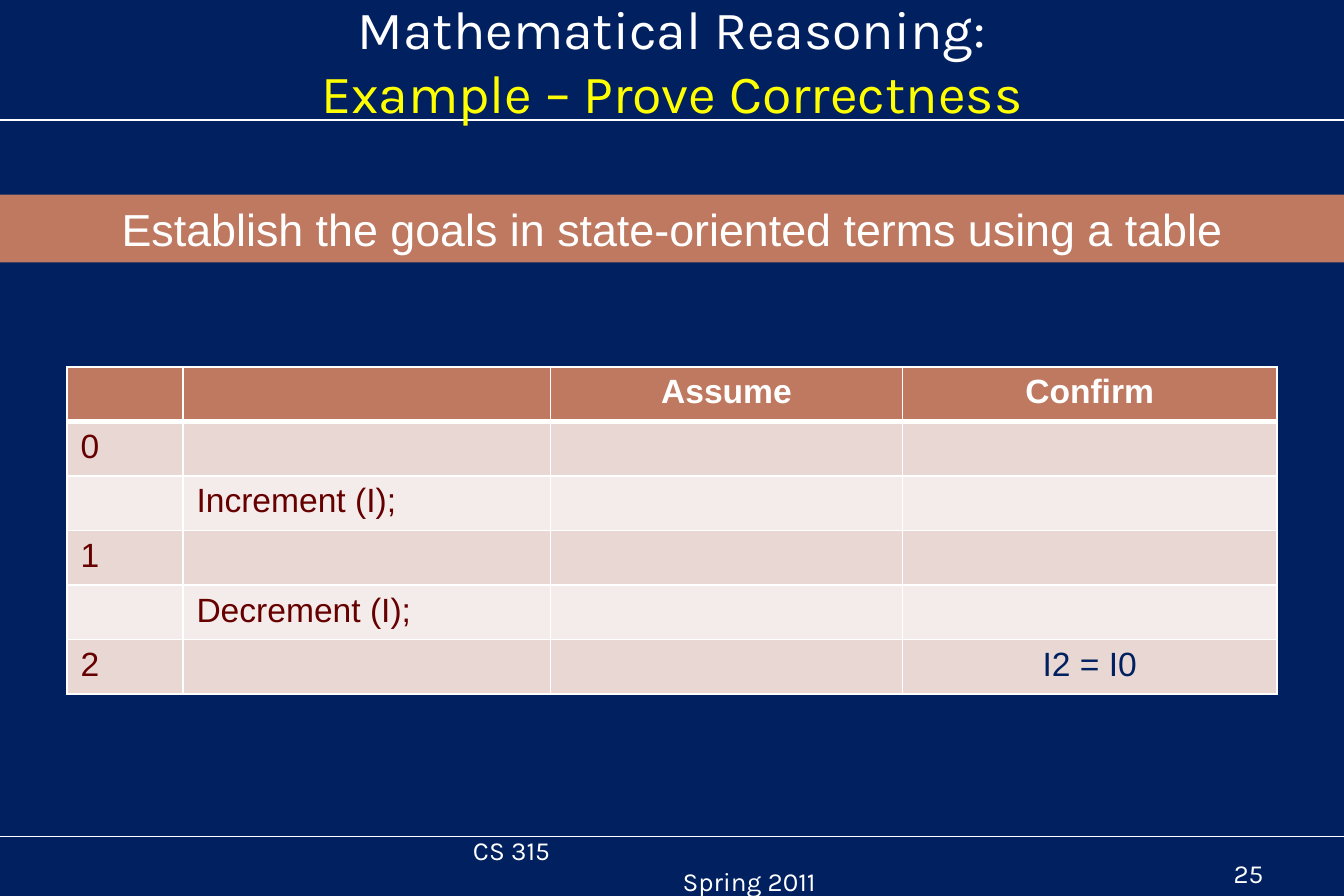
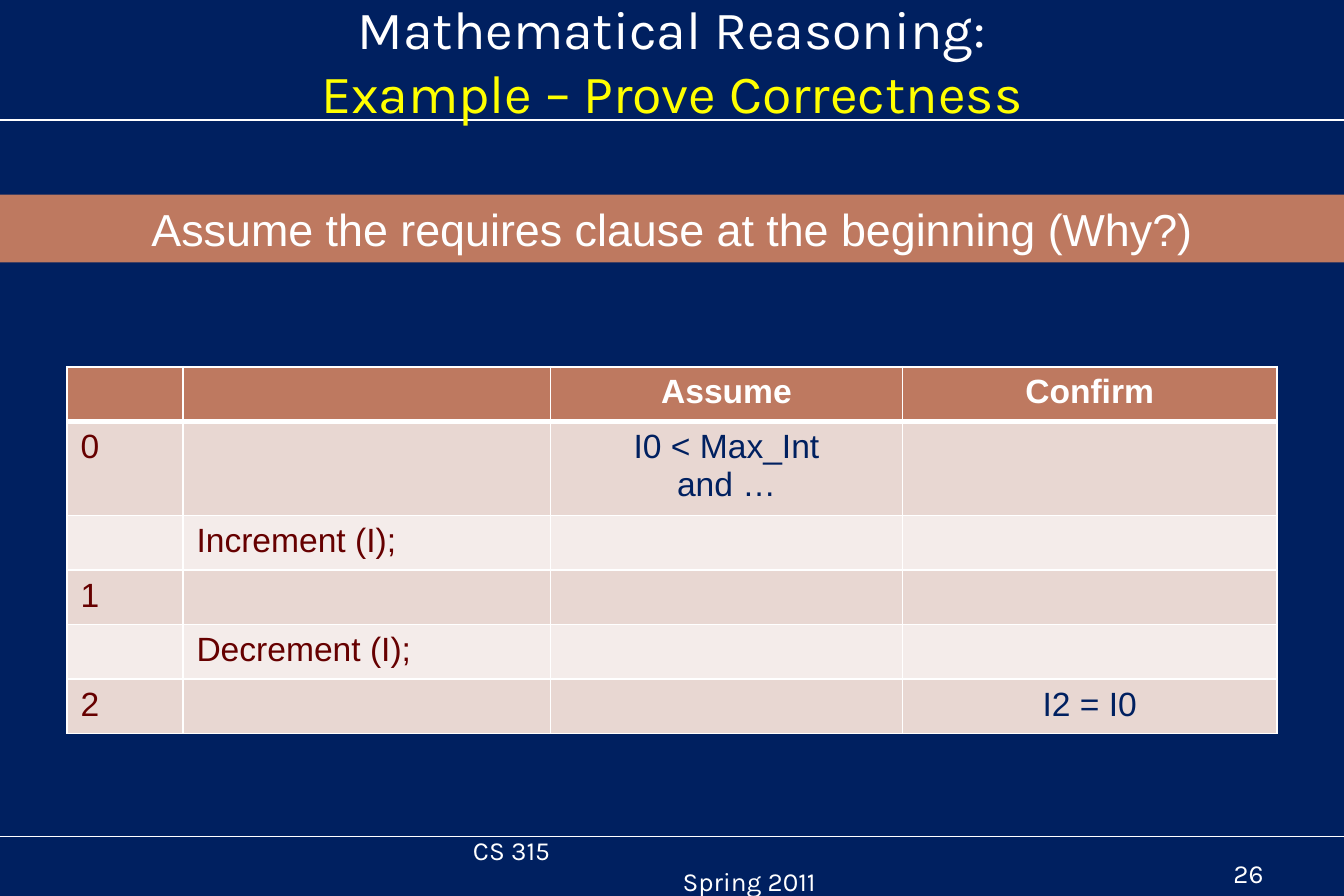
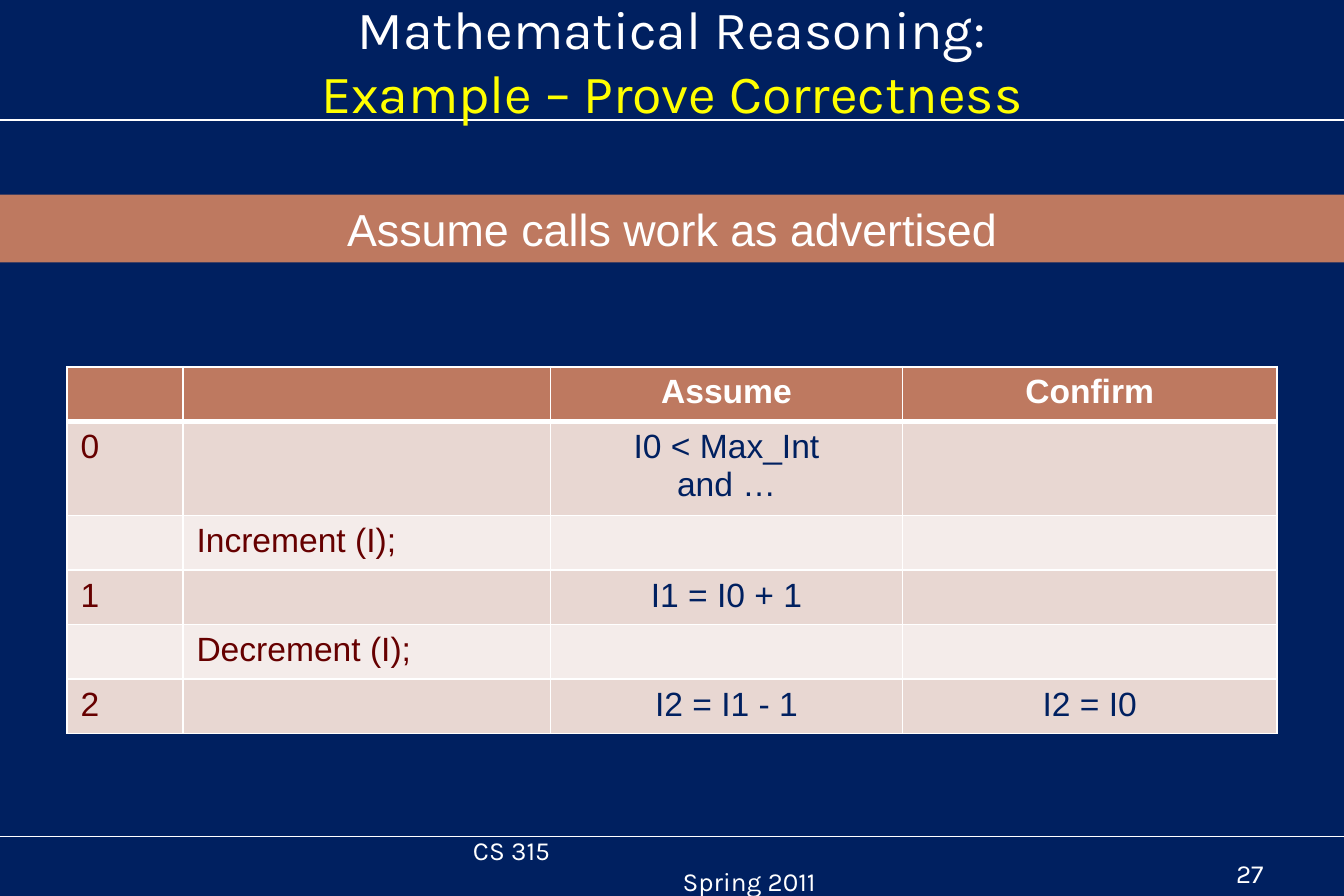
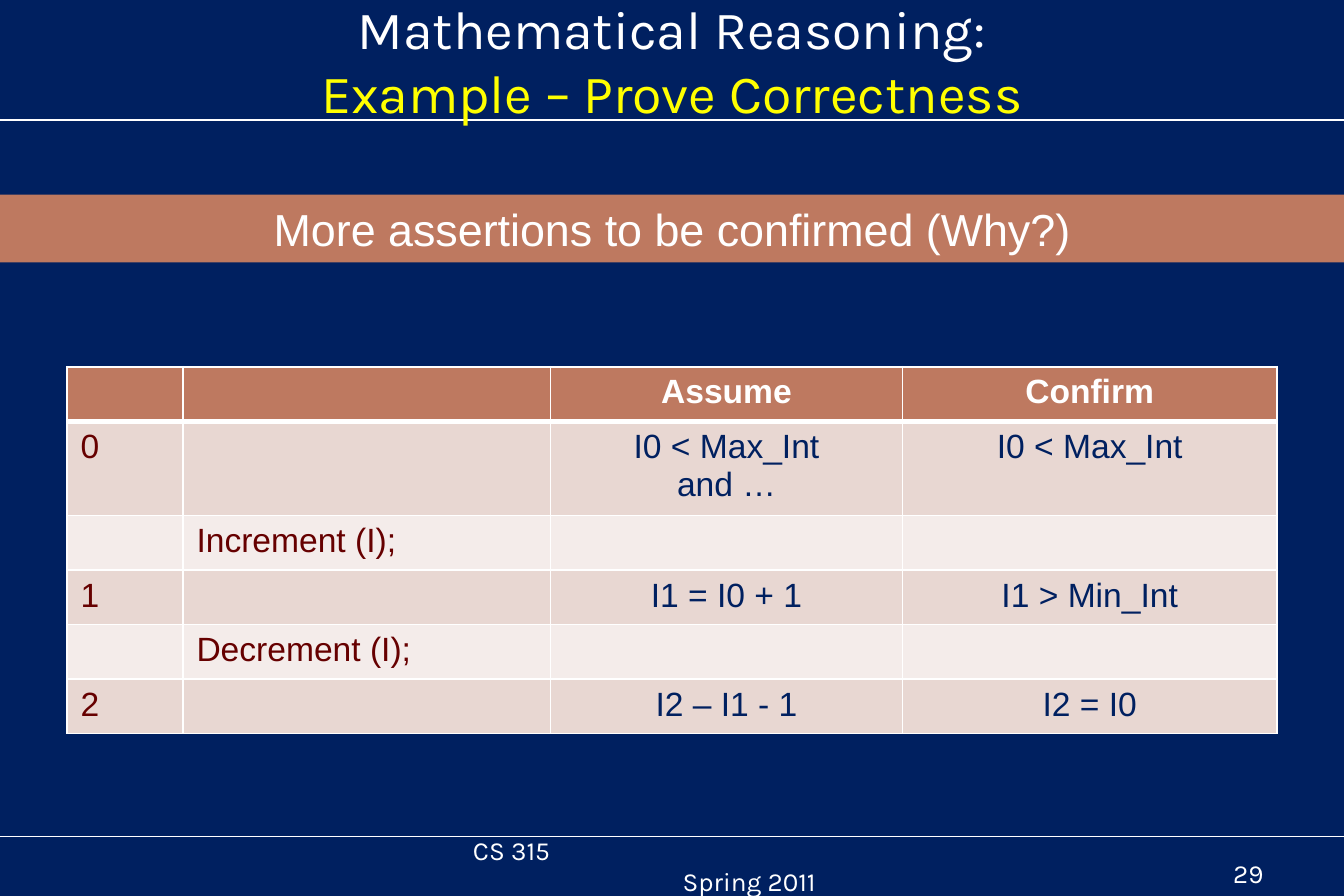
"""Build four slides that prove Increment then Decrement correct with a table."""
from lxml import etree
from pptx import Presentation
from pptx.dml.color import RGBColor
from pptx.enum.shapes import MSO_CONNECTOR, MSO_SHAPE
from pptx.enum.text import MSO_ANCHOR, MSO_AUTO_SIZE, PP_ALIGN
from pptx.oxml.ns import qn
from pptx.util import Cm, Pt

STRAIGHT, RECT = MSO_CONNECTOR.STRAIGHT, MSO_SHAPE.RECTANGLE
TOP, MIDDLE, BOTTOM = MSO_ANCHOR.TOP, MSO_ANCHOR.MIDDLE, MSO_ANCHOR.BOTTOM
LEFT, CENTER, RIGHT = PP_ALIGN.LEFT, PP_ALIGN.CENTER, PP_ALIGN.RIGHT
GROW = MSO_AUTO_SIZE.SHAPE_TO_FIT_TEXT

NAVY, WHITE, YELLOW = "002060", "FFFFFF", "FFFF00"
CLAY, MAROON, ROW_DARK, ROW_LIGHT = "BE7960", "660000", "E8D7D2", "F4ECEA"
HEAD_FONT, BODY_FONT = "Karla", "Arial"
WIDTH, HEIGHT = 25.4, 16.93
RULES = (15.8, 2.27)

TITLE = [("Mathematical Reasoning:", WHITE), ("Example – Prove Correctness", YELLOW)]
FOOTER = ["CS 315", "Spring 2011"]
HEADER = ("", "", "Assume", "Confirm")
STEPS = [("0", ""), ("", "Increment (I);"), ("1", ""), ("", "Decrement (I);"), ("2", "")]
COLUMNS = (2.19, 6.94, 6.66, 7.07)
ROW_HEIGHT = 1.03

START = "I0 < Max_Int\nand …"
GOAL = "I2 = I0"
SLIDES = [
    {"number": 25, "band": "Establish the goals in state-oriented terms using a table",
     "assume": {}, "confirm": {"2": GOAL}},
    {"number": 26, "band": "Assume the requires clause at the beginning (Why?)",
     "assume": {"0": START}, "confirm": {"2": GOAL}},
    {"number": 27, "band": "Assume calls work as advertised",
     "assume": {"0": START, "1": "I1 = I0 + 1", "2": "I2 = I1 - 1"},
     "confirm": {"2": GOAL}},
    {"number": 29, "band": "More assertions to be confirmed (Why?)",
     "assume": {"0": START, "1": "I1 = I0 + 1", "2": "I2 – I1 - 1"},
     "confirm": {"0": "I0 < Max_Int", "1": "I1 > Min_Int", "2": GOAL}},
]


def rgb(color):
    return RGBColor.from_string(color)


def write(tf, paragraphs, size=18, font=BODY_FONT, color=WHITE, bold=False,
          align=LEFT, anchor=TOP):
    tf.word_wrap = True
    tf.vertical_anchor = anchor
    for i, lines in enumerate(paragraphs):
        p = tf.paragraphs[0] if i == 0 else tf.add_paragraph()
        p.alignment = align
        if isinstance(lines, str):
            lines = [(lines, color)]
        for j, (text, line_color) in enumerate(lines):
            if j:
                p.add_line_break()
            r = p.add_run()
            r.text = text
            r.font.size, r.font.name, r.font.bold = Pt(size), font, bold
            r.font.color.rgb = rgb(line_color)


def add_text(s, box, paragraphs, **style):
    tf = s.shapes.add_textbox(*map(Cm, box)).text_frame
    write(tf, paragraphs, **style)
    return tf


def add_rule(s, y):
    line = s.shapes.add_connector(STRAIGHT, 0, Cm(y), Cm(WIDTH), Cm(y))
    line.line.color.rgb = rgb(WHITE)
    line.line.width = Pt(0.75)
    etree.SubElement(line._element.spPr, qn("a:effectLst"))


def add_frame(s, number):
    for y in RULES:
        add_rule(s, y)
    add_text(s, (1.27, 0.38, 22.86, 1.5), [TITLE], size=28.8, font=HEAD_FONT,
             align=CENTER, anchor=MIDDLE)
    small = {"size": 14, "font": HEAD_FONT, "anchor": BOTTOM}
    tf = add_text(s, (8.69, 15.75, 8.05, 1.32), FOOTER, **small)
    tf.paragraphs[1]._p.get_or_add_pPr().set("marL", str(Cm(3.96)))
    add_text(s, (18.21, 15.75, 5.92, 1.17), [str(number)], align=RIGHT, **small)


def add_band(s, text):
    sp = s.shapes.add_shape(RECT, 0, Cm(3.68), Cm(WIDTH), Cm(1.28))
    sp.shadow.inherit = False
    sp.fill.solid()
    sp.fill.fore_color.rgb = rgb(CLAY)
    sp.line.fill.background()
    write(sp.text_frame, [text], size=24, align=CENTER)
    sp.text_frame.auto_size = GROW


def set_border(cell, side, width):
    ln = etree.SubElement(cell._tc.get_or_add_tcPr(), qn("a:ln" + side), w=str(Pt(width)))
    fill = etree.SubElement(ln, qn("a:solidFill"))
    etree.SubElement(fill, qn("a:srgbClr"), val=WHITE)


def add_proof_table(s, assume, confirm):
    rows = [HEADER] + [(state, call, assume.get(state, ""), confirm.get(state, ""))
                       for state, call in STEPS]
    table = s.shapes.add_table(len(rows), len(COLUMNS), Cm(1.27), Cm(6.93),
                               Cm(sum(COLUMNS)), Cm(ROW_HEIGHT * len(rows))).table
    for column, width in zip(table.columns, COLUMNS):
        column.width = Cm(width)
    for i, row in enumerate(rows):
        table.rows[i].height = Cm(ROW_HEIGHT)
        for j, text in enumerate(row):
            cell = table.cell(i, j)
            for side in "LRTB":
                set_border(cell, side, 3 if (i, side) in ((0, "B"), (1, "T")) else 1)
            cell.fill.solid()
            cell.fill.fore_color.rgb = rgb(CLAY if i == 0 else ROW_DARK if i % 2 else ROW_LIGHT)
            if text:
                color = WHITE if i == 0 else MAROON if j < 2 else NAVY
                write(cell.text_frame, text.split("\n"), color=color, bold=i == 0,
                      align=LEFT if j < 2 else CENTER)


def main():
    prs = Presentation()
    prs.slide_width, prs.slide_height = Cm(WIDTH), Cm(HEIGHT)
    background = prs.slide_master.background.fill
    background.solid()
    background.fore_color.rgb = rgb(NAVY)
    for content in SLIDES:
        s = prs.slides.add_slide(prs.slide_layouts[6])
        add_frame(s, content["number"])
        add_proof_table(s, content["assume"], content["confirm"])
        add_band(s, content["band"])
    prs.save("out.pptx")


if __name__ == "__main__":
    main()
